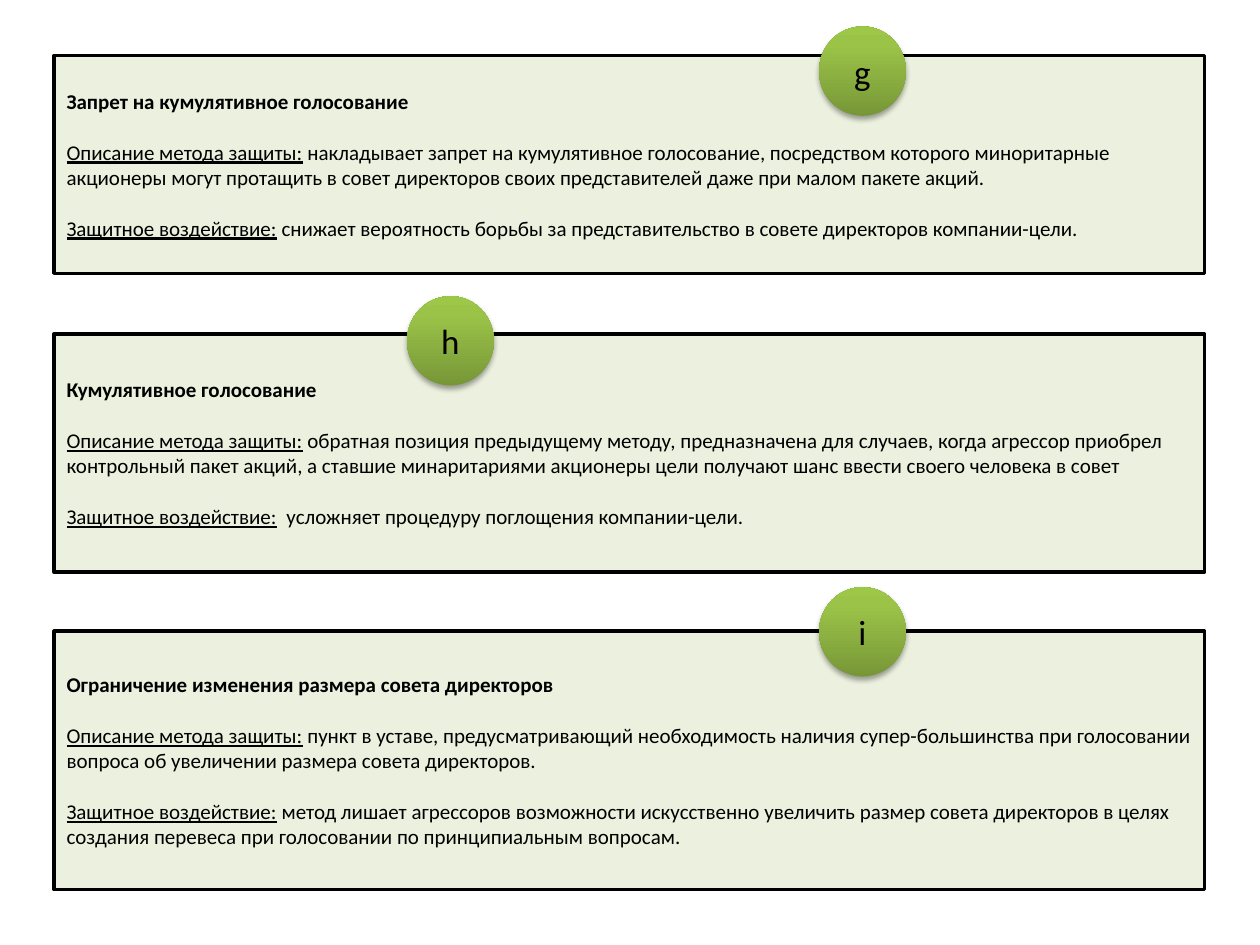
import copy

import lxml.etree
import pptx
import pptx.dml.color
import pptx.enum.shapes
import pptx.enum.text
import pptx.oxml.ns
import pptx.util

Inches = pptx.util.Inches
Pt = pptx.util.Pt
qn = pptx.oxml.ns.qn
SHAPES = pptx.enum.shapes.MSO_SHAPE
ALIGN = pptx.enum.text.PP_ALIGN

COLOURS = {"panel": "EBF1DE", "ink": "000000",
           "badge_bottom": "779737", "badge_middle": "9BC348", "badge_top": "9DC746"}
BADGE_STOPS = [(0, "badge_bottom"), (0.8, "badge_middle"), (1, "badge_top")]
PANEL_LEFT, PANEL_WIDTH = 0.43, 9.13
BADGE_WIDTH, BADGE_HEIGHT = 0.69, 0.71
LINE_GAP = Pt(14.65)

# panel top, panel height, badge left, badge top, letter, title, description, effect
METHODS = [
    (0.44, 1.73, 6.5, 0.21, "g", "Запрет на кумулятивное голосование",
     " накладывает запрет на кумулятивное голосование, посредством которого миноритарные "
     "акционеры могут протащить в совет директоров своих представителей даже при малом "
     "пакете акций.",
     " снижает вероятность борьбы за представительство в совете директоров компании-цели."),
    (2.65, 1.89, 3.23, 2.35, "h", "Кумулятивное голосование",
     " обратная позиция предыдущему методу, предназначена для случаев, когда агрессор "
     "приобрел контрольный пакет акций, а ставшие минаритариями акционеры цели получают "
     "шанс ввести своего человека в совет",
     "  усложняет процедуру поглощения компании-цели."),
    (5.01, 2.05, 6.5, 4.66, "i", "Ограничение изменения размера совета директоров",
     " пункт в уставе, предусматривающий необходимость наличия супер-большинства при "
     "голосовании вопроса об увеличении размера совета директоров.",
     " метод лишает агрессоров возможности искусственно увеличить размер совета директоров "
     "в целях создания перевеса при голосовании по принципиальным вопросам."),
]


def rgb(name):
    return pptx.dml.color.RGBColor.from_string(COLOURS[name])


def add_run(paragraph, text, size, bold=False, underline=False):
    run = paragraph.add_run()
    run.text = text
    run.font.name = "Calibri"
    run.font.size = Pt(size)
    run.font.bold = bold
    run.font.underline = underline
    run.font.color.rgb = rgb("ink")


presentation = pptx.Presentation()
presentation.slide_width = Inches(10)
presentation.slide_height = Inches(7.5)
slide = presentation.slides.add_slide(presentation.slide_layouts[6])

for top, height, _, _, _, title, description, effect in METHODS:
    panel = slide.shapes.add_shape(SHAPES.RECTANGLE, Inches(PANEL_LEFT), Inches(top),
                                   Inches(PANEL_WIDTH), Inches(height))
    panel.shadow.inherit = False
    panel.fill.solid()
    panel.fill.fore_color.rgb = rgb("panel")
    panel.line.color.rgb = rgb("ink")
    panel.line.width = Pt(2)
    frame = panel.text_frame
    frame.vertical_anchor = pptx.enum.text.MSO_ANCHOR.MIDDLE
    paragraph = frame.paragraphs[0]
    paragraph.alignment = ALIGN.LEFT
    add_run(paragraph, title, 12, bold=True)
    for label, text in [("Описание метода защиты:", description),
                        ("Защитное воздействие:", effect)]:
        paragraph = frame.add_paragraph()
        paragraph.alignment = ALIGN.LEFT
        paragraph.space_before = LINE_GAP
        add_run(paragraph, label, 12, underline=True)
        add_run(paragraph, text, 12)

for _, _, left, top, letter, *_ in METHODS:
    badge = slide.shapes.add_shape(SHAPES.OVAL, Inches(left), Inches(top),
                                   Inches(BADGE_WIDTH), Inches(BADGE_HEIGHT))
    badge.line.fill.background()
    badge.fill.gradient()
    badge.fill.gradient_angle = 90
    properties = badge._element.spPr
    stop_list = properties.find(".//" + qn("a:gsLst"))
    stop_list.append(copy.deepcopy(stop_list[0]))
    for stop, (position, colour) in zip(badge.fill.gradient_stops, BADGE_STOPS):
        stop.position = position
        stop.color.rgb = rgb(colour)

    badge.shadow.inherit = False
    shadow = lxml.etree.SubElement(
        properties.find(qn("a:effectLst")), qn("a:outerShdw"),
        blurRad=str(Pt(3.1)), dist=str(Pt(1.8)), dir="5400000", rotWithShape="0")
    shadow_colour = lxml.etree.SubElement(shadow, qn("a:srgbClr"), val=COLOURS["ink"])
    lxml.etree.SubElement(shadow_colour, qn("a:alpha"), val="35000")

    badge.text_frame.vertical_anchor = pptx.enum.text.MSO_ANCHOR.MIDDLE
    paragraph = badge.text_frame.paragraphs[0]
    paragraph.alignment = ALIGN.CENTER
    add_run(paragraph, letter, 20)

presentation.save("out.pptx")
